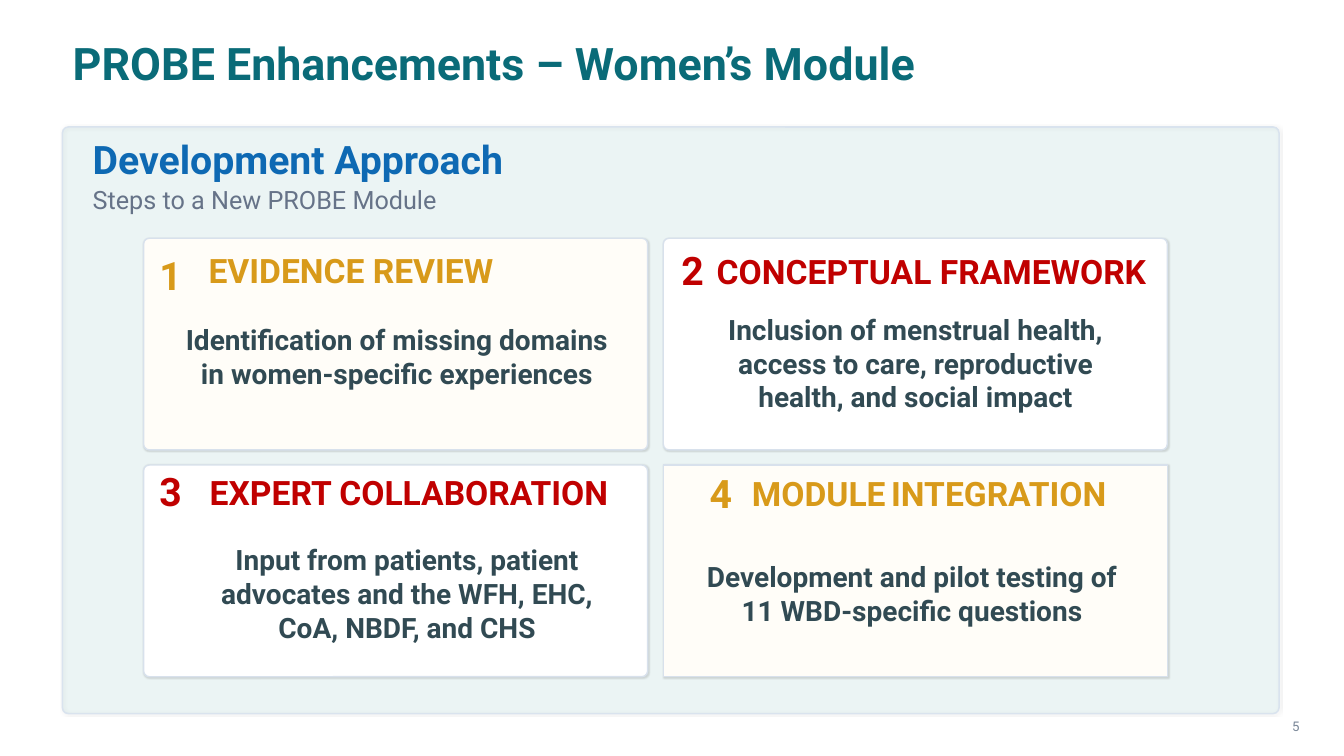
from lxml import etree
from pptx import Presentation
from pptx.dml.color import RGBColor
from pptx.enum.shapes import MSO_SHAPE
from pptx.enum.text import MSO_ANCHOR, PP_ALIGN
from pptx.oxml.ns import qn
from pptx.util import Pt

THEME = {
    "font": "Roboto",
    "color": {
        "title": "0A6B78", "subtitle": "0E69B3", "muted": "667388", "page": "7A8798",
        "gold": "D89A1A", "red": "C00000", "body": "314A53", "shadow": "000000",
        "panel": "008080", "panel_line": "D9E3EE",
        "cream": "FFFDF8", "white": "FFFFFF", "card_line": "D8E1EC",
    },
    "size": {"title": 32, "subtitle": 28, "number": 28, "heading": 24,
             "body": 20, "caption": 18, "small_gap": 16, "page": 9.5},
}
COLOR, SIZE = THEME["color"], THEME["size"]

presentation = Presentation()
presentation.slide_width, presentation.slide_height = Pt(960), Pt(540)
slide = presentation.slides.add_slide(presentation.slide_layouts[6])


def add_box(box, radius, fill, line, line_width, shadow):
    """Draw a rounded box; shadow holds opacity in percent, blur and distance in points."""
    shape = slide.shapes.add_shape(MSO_SHAPE.ROUNDED_RECTANGLE, *map(Pt, box))
    shape.adjustments[0] = radius
    shape.fill.solid()
    shape.fill.fore_color.rgb = RGBColor.from_string(COLOR[fill])
    shape.line.color.rgb = RGBColor.from_string(COLOR[line])
    shape.line.width = Pt(line_width)
    shape.shadow.inherit = False
    opacity, blur, distance = shadow
    effects = shape._element.spPr.find(qn("a:effectLst"))
    outer = etree.SubElement(effects, qn("a:outerShdw"), blurRad=str(Pt(blur)),
                             dist=str(Pt(distance)), dir="2700000", rotWithShape="0")
    tone = etree.SubElement(outer, qn("a:srgbClr"), val=COLOR["shadow"])
    etree.SubElement(tone, qn("a:alpha"), val=str(opacity * 1000))
    return shape


def add_text(runs, left, middle, width, height, color, bold=True, align=PP_ALIGN.LEFT):
    """Write (text, size name) runs in a box centred vertically on middle."""
    box = slide.shapes.add_textbox(Pt(left), Pt(middle - height / 2), Pt(width), Pt(height))
    frame = box.text_frame
    settings = {"word_wrap": True, "vertical_anchor": MSO_ANCHOR.MIDDLE, "margin_left": 0,
                "margin_right": 0, "margin_top": 0, "margin_bottom": 0}
    for name, value in settings.items():
        setattr(frame, name, value)
    paragraph = frame.paragraphs[0]
    paragraph.alignment = align
    for text, size in runs:
        run = paragraph.add_run()
        run.text = text
        font_format = {"name": THEME["font"], "size": Pt(SIZE[size]), "bold": bold}
        for name, value in font_format.items():
            setattr(run.font, name, value)
        run.font.color.rgb = RGBColor.from_string(COLOR[color])


# Title, page number and panel
add_text([("PROBE Enhancements – Women’s Module", "title")], 52, 44.8, 634, 30, "title")
add_text([("5", "page")], 923, 518.5, 30, 16, "page", bold=False)
panel = add_box((44.64, 90.72, 869, 419), 0.01, "panel", "panel_line", 1.1, (10, 1.5, 0.6))
panel_color = panel.fill._xPr.find(qn("a:solidFill"))[0]
etree.SubElement(panel_color, qn("a:alpha"), val="7000")
add_text([("Development Approach", "subtitle")], 66.24, 113.8, 413, 6, "subtitle")
add_text([("Steps to a New PROBE Module", "caption")], 66.24, 142.6, 266, 12, "muted", bold=False)

# Step cards, row by row; each text is given as left, middle and, where it varies, width
CARD_LEFT, CARD_TOP, CARD_WIDTH, CARD_HEIGHT = 102.6, 170.2, 360, 151.2
COLUMN_STEP, ROW_STEP = 371.2, 162
cards = [
    {"fill": "cream", "accent": "gold", "radius": 0.027, "number_at": (113.8, 196.6),
     "heading": [("EVIDENCE REVIEW", "heading")], "heading_at": (149, 193, 230),
     "body": "Identification of missing domains in women-specific experiences",
     "body_at": (129.6, 254.5, 308)},
    {"fill": "white", "accent": "red", "radius": 0.027, "number_at": (486.7, 193),
     "heading": [("CONCEPTUAL FRAMEWORK", "heading")], "heading_at": (512, 193.7, 343),
     "body": "Inclusion of menstrual health, access to care, reproductive health, "
             "and social impact",
     "body_at": (510.5, 259.2, 287)},
    {"fill": "white", "accent": "red", "radius": 0.027, "number_at": (113.8, 350.6),
     "heading": [("EXPERT COLLABORATION", "heading")], "heading_at": (149.8, 351.4, 300),
     "body": "Input from patients, patient advocates and the WFH, EHC, CoA, NBDF, and CHS",
     "body_at": (136.8, 423.7, 308)},
    {"fill": "cream", "accent": "gold", "radius": 0, "number_at": (506.9, 352.1),
     "heading": [("MODULE", "heading"), (" ", "small_gap"), ("INTEGRATION", "heading")],
     "heading_at": (537.1, 352.4, 264),
     "body": "Development and pilot testing of 11 WBD-specific questions",
     "body_at": (497.5, 423.7, 308)},
]
for index, card in enumerate(cards):
    row, column = divmod(index, 2)
    box = (CARD_LEFT + column * COLUMN_STEP, CARD_TOP + row * ROW_STEP, CARD_WIDTH, CARD_HEIGHT)
    add_box(box, card["radius"], card["fill"], "card_line", 1, (12, 1.2, 0.4))
    add_text([(str(index + 1), "number")], *card["number_at"], 30, 37, card["accent"])
    add_text(card["heading"], *card["heading_at"], 16, card["accent"])
    add_text([(card["body"], "body")], *card["body_at"], 68, "body", align=PP_ALIGN.CENTER)

presentation.save("out.pptx")
